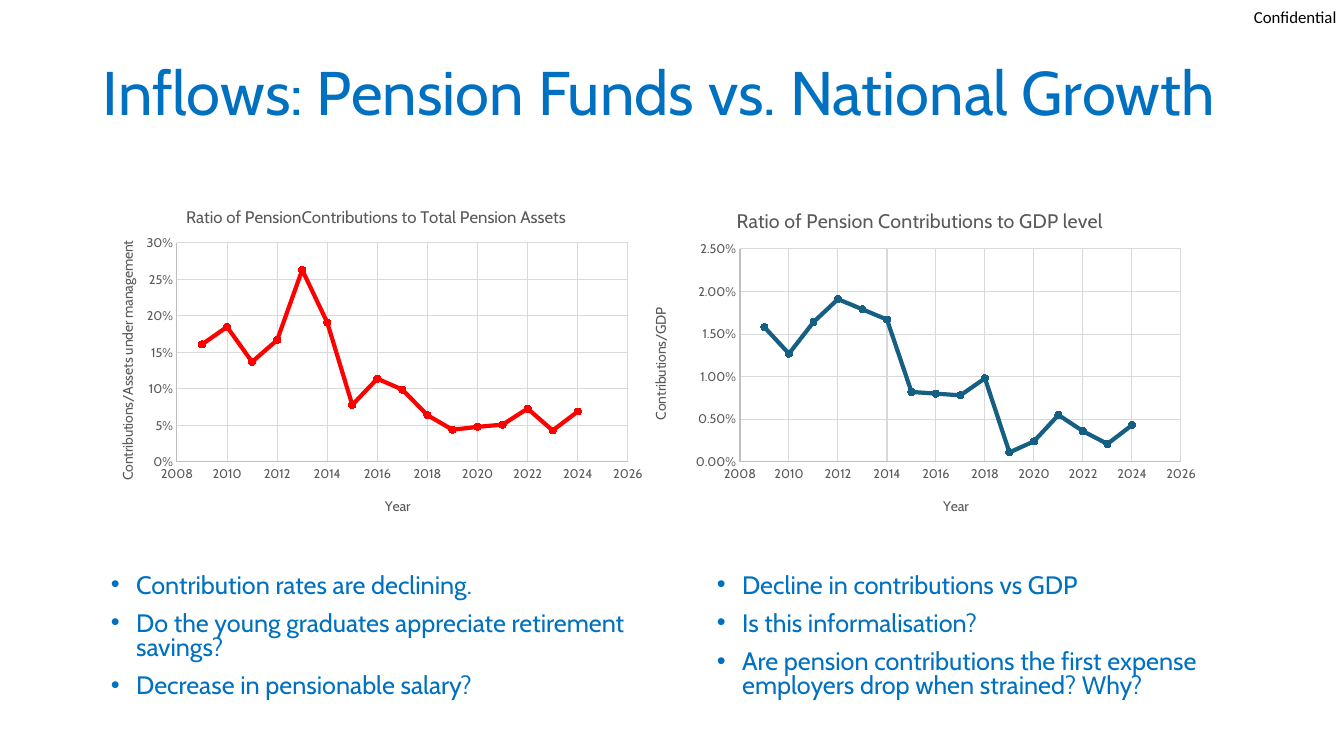
from pptx import Presentation
from pptx import util as u
from pptx.chart import data as cd
from pptx.dml.color import RGBColor
from pptx.enum import chart as ce, text
from pptx.oxml import parse_xml
from pptx.oxml.ns import nsdecls, qn

"""Builds the slide comparing pension fund inflows with national growth."""

PX = 914400 / 100.8
COLORS = {"blue": "0070C0", "black": "000000", "gray": "595959", "axis": "BFBFBF",
          "grid": "D9D9D9", "red": "FF0000", "teal": "156082"}
YEARS = range(2009, 2025)
ASSETS = [0.161, 0.185, 0.137, 0.167, 0.263, 0.191, 0.078, 0.114,
          0.099, 0.064, 0.044, 0.048, 0.051, 0.073, 0.043, 0.069]
GDP = [0.0158, 0.0127, 0.0164, 0.0191, 0.0179, 0.0167, 0.0082, 0.008,
       0.0078, 0.0098, 0.0011, 0.0024, 0.0055, 0.0036, 0.0021, 0.0043]


def px(n):
    """Turn pixels into EMU."""
    return u.Emu(round(n * PX))


def rgb(name):
    """Look up a colour."""
    return RGBColor.from_string(COLORS[name])


def set_font(font, size, color, name="Cabin"):
    """Apply size, colour and typeface."""
    for key, value in {"size": u.Pt(size), "name": name, "bold": False}.items():
        setattr(font, key, value)
    font.color.rgb = rgb(color)


def set_line(line, color, width):
    """Apply line colour and width."""
    line.color.rgb = rgb(color)
    line.width = u.Pt(width)


def add_text(s, box, lines, size, color, name="Cabin", frame=None, para=None, bullet=False):
    """Place a text box with one paragraph per line."""
    tf = s.shapes.add_textbox(*map(px, box)).text_frame
    for key, value in {"word_wrap": True, **(frame or {})}.items():
        setattr(tf, key, value)
    for i, line in enumerate(lines):
        p = tf.paragraphs[0] if i == 0 else tf.add_paragraph()
        for key, value in (para or {}).items():
            setattr(p, key, value)
        if bullet:
            pPr = p._p.get_or_add_pPr()
            pPr.set("marL", str(u.Inches(0.25)))
            pPr.set("indent", str(-u.Inches(0.25)))
            pPr.append(parse_xml(f'<a:buFont {nsdecls("a")} typeface="Arial"/>'))
            pPr.append(parse_xml(f'<a:buChar {nsdecls("a")} char="•"/>'))
        r = p.add_run()
        r.text = line
        set_font(r.font, size, color, name)


def set_layout(parent, index, box, place, inner=False):
    """Fix a chart part at a place given relative to the chart box."""
    for old in parent.findall(qn("c:layout")):
        parent.remove(old)
    target = '<c:layoutTarget val="inner"/>' if inner else ""
    modes = '<c:xMode val="edge"/><c:yMode val="edge"/>'
    sizes = (box[2], box[3]) * 2
    values = "".join(f'<c:{tag} val="{n / size:.4f}"/>'
                     for tag, n, size in zip("xywh", place, sizes))
    parent.insert(index, parse_xml(
        f'<c:layout {nsdecls("c")}><c:manualLayout>{target}{modes}{values}'
        '</c:manualLayout></c:layout>'))


def set_title(title, words, size, box, place, rotated=False):
    """Write a chart or axis title at its place."""
    tf = title.text_frame
    tf.text = words
    set_font(tf.paragraphs[0].runs[0].font, size, "gray")
    if rotated:
        tf._txBody.bodyPr.set("rot", "-5400000")
        tf._txBody.bodyPr.set("vert", "horz")
    set_layout(title._element, 1, box, place)


def style_axis(axis, low, high, step, fmt):
    """Set scale, labels, line and grid of an axis."""
    values = {"minimum_scale": low, "maximum_scale": high, "major_unit": step,
              "has_major_gridlines": True, "major_tick_mark": ce.XL_TICK_MARK.NONE,
              "minor_tick_mark": ce.XL_TICK_MARK.NONE}
    for key, value in values.items():
        setattr(axis, key, value)
    set_line(axis.format.line, "axis", 0.75)
    set_line(axis.major_gridlines.format.line, "grid", 0.75)
    labels = axis.tick_labels
    labels.number_format, labels.number_format_is_linked = fmt, False
    set_font(labels.font, 9, "gray")


def add_ratio_chart(s, box, values, color, title, y_title, scale, plot):
    """Place a ratio chart with its titles; each title is words, place and size."""
    data = cd.XyChartData()
    series = data.add_series("Series 1")
    for year, value in zip(YEARS, values):
        series.add_data_point(year, value)
    chart = s.shapes.add_chart(ce.XL_CHART_TYPE.XY_SCATTER_LINES,
                               *map(px, box), data).chart
    chart.has_legend = False
    set_font(chart.font, 10, "black")
    chart.plots[0].vary_by_categories = False
    line = chart.plots[0].series[0]
    line.smooth = False
    set_line(line.format.line, color, 3)
    line.marker.style, line.marker.size = ce.XL_MARKER_STYLE.CIRCLE, 5
    line.marker.format.fill.solid()
    line.marker.format.fill.fore_color.rgb = rgb(color)
    line.marker.format.line.color.rgb = rgb(color)
    style_axis(chart.category_axis, 2008, 2026, 2, "General")
    style_axis(chart.value_axis, *scale)
    words, place, size = title
    set_title(chart.chart_title, words, size, box, place)
    year_place = (plot[0] + plot[2] / 2 - 20, 308)
    set_title(chart.category_axis.axis_title, "Year", 10, box, year_place)
    words, place = y_title
    set_title(chart.value_axis.axis_title, words, 10, box, place, rotated=True)
    set_layout(chart._chartSpace.chart.plotArea, 0, box, plot, inner=True)


def add_bullets(s, box, lines):
    """Place a bulleted list."""
    add_text(s, box, lines, 18, "blue", bullet=True,
             para={"line_spacing": 0.8, "space_before": u.Pt(10)})


def main():
    """Build and save the slide."""
    prs = Presentation()
    prs.slide_width, prs.slide_height = px(1344), px(756)
    s = prs.slides.add_slide(prs.slide_layouts[6])
    no_margin = {f"margin_{side}": 0 for side in ("left", "right", "top", "bottom")}
    add_text(s, (1254, 7, 87, 20), ["Confidential"], 12, "black", "Calibri",
             frame={**no_margin, "word_wrap": False})
    add_text(s, (93, 40, 1159, 112), ["Inflows: Pension Funds vs. National Growth"], 44,
             "blue", frame={"vertical_anchor": text.MSO_ANCHOR.MIDDLE},
             para={"line_spacing": 0.9})
    add_ratio_chart(s, (93, 186, 561, 345), ASSETS, "red",
                    ("Ratio of PensionContributions to Total Pension Assets", (90, 17), 12),
                    ("Contributions/Assets under management", (22, 52)),
                    (0, 0.3, 0.05, "0%"), (84, 57, 451, 219))
    add_bullets(s, (101, 570, 572, 146),
                ["Contribution rates are declining.",
                 "Do the young graduates appreciate retirement savings?",
                 "Decrease in pensionable salary?"])
    add_bullets(s, (707, 570, 543, 146),
                ["Decline in contributions vs GDP",
                 "Is this informalisation?",
                 "Are pension contributions the first expense employers drop when strained? Why?"])
    add_ratio_chart(s, (625, 186, 583, 345), GDP, "teal",
                    ("Ratio of Pension Contributions to GDP level", (108, 18), 14),
                    ("Contributions/GDP", (23, 119)),
                    (0, 0.025, 0.005, "0.00%"), (115, 63, 441, 213))
    prs.save("out.pptx")


if __name__ == "__main__":
    main()
